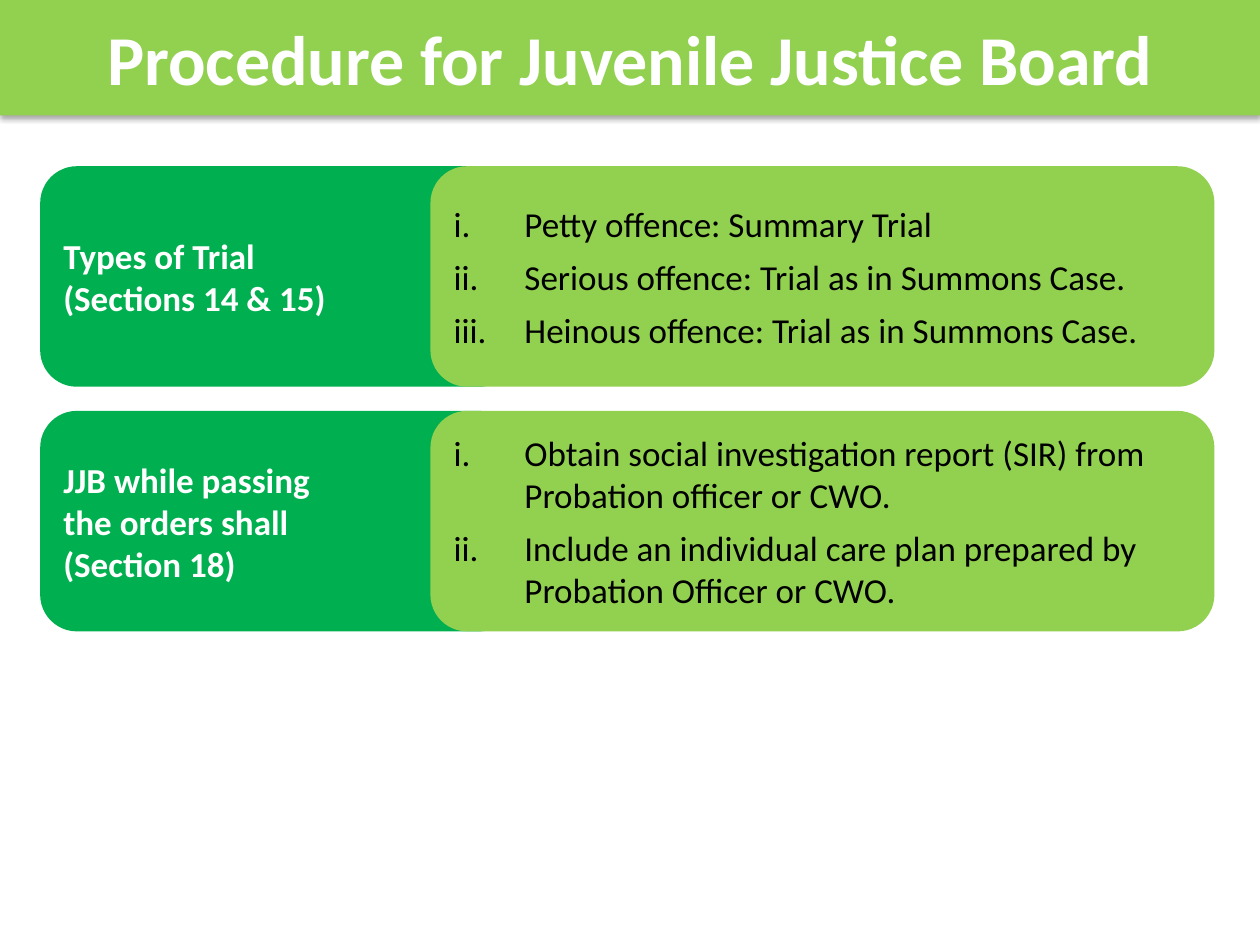
from lxml.etree import SubElement
from pptx import Presentation
from pptx.dml.color import RGBColor
from pptx.enum.shapes import MSO_SHAPE
from pptx.enum.text import MSO_ANCHOR, MSO_AUTO_SIZE, PP_ALIGN
from pptx.oxml import parse_xml
from pptx.oxml.ns import nsdecls, qn
from pptx.util import Pt

LIGHT_GREEN = RGBColor(0x92, 0xD0, 0x50)
DARK_GREEN = RGBColor(0x00, 0xB0, 0x50)
WHITE = RGBColor(0xFF, 0xFF, 0xFF)
BLACK = RGBColor(0x00, 0x00, 0x00)

ROW_TOP, ROW_HEIGHT, ROW_PITCH = 95, 126, 139.8
LIST_INDENT = 40.5

ROWS = [
    (["Types of Trial", "(Sections 14 & 15)"],
     ["Petty offence: Summary Trial",
      "Serious offence: Trial as in Summons Case.",
      "Heinous offence: Trial as in Summons Case."]),
    (["JJB while passing \vthe orders shall", "(Section 18)"],
     ["Obtain social investigation report (SIR) from Probation officer or CWO.",
      "Include an individual care plan prepared by Probation Officer or CWO."]),
]


def add_panel(shape_type, left, top, width, height, fill):
    panel = slide.shapes.add_shape(shape_type, Pt(left), Pt(top), Pt(width), Pt(height))
    panel.shadow.inherit = False
    panel.fill.solid()
    panel.fill.fore_color.rgb = fill
    panel.line.fill.background()
    return panel


def write_paragraphs(panel, texts, color, bold=False, numbered=False):
    frame = panel.text_frame
    frame.word_wrap = True
    frame.vertical_anchor = MSO_ANCHOR.MIDDLE
    for index, text in enumerate(texts):
        paragraph = frame.add_paragraph() if index else frame.paragraphs[0]
        paragraph.alignment = PP_ALIGN.LEFT
        if numbered:
            paragraph.space_after = Pt(6)
            properties = paragraph._p.get_or_add_pPr()
            properties.set("marL", str(Pt(LIST_INDENT)))
            properties.set("indent", str(-Pt(LIST_INDENT)))
            SubElement(properties, qn("a:buFont"), typeface="+mj-lt")
            SubElement(properties, qn("a:buAutoNum"), type="romanLcPeriod")
        for part, words in enumerate(text.split("\v")):
            if part:
                paragraph.add_line_break()
            run = paragraph.add_run()
            run.text = words
            run.font.name = "Calibri"
            run.font.size = Pt(20)
            run.font.bold = bold
            run.font.color.rgb = color


presentation = Presentation()
presentation.slide_width = Pt(720)
presentation.slide_height = Pt(540)
slide = presentation.slides.add_slide(presentation.slide_layouts[5])

# Header band, placed behind the title
header = add_panel(MSO_SHAPE.RECTANGLE, 0, 0, 720, 66, LIGHT_GREEN)
header._element.spPr.find(qn("a:effectLst")).append(parse_xml(
    f'<a:outerShdw {nsdecls("a")} blurRad="{Pt(3.1)}" dist="{Pt(1.8)}" dir="5400000" '
    'rotWithShape="0"><a:srgbClr val="000000"><a:alpha val="35000"/></a:srgbClr></a:outerShdw>'))
slide.shapes._spTree.insert(2, header._element)

title = slide.shapes.title
title.left, title.top, title.width, title.height = Pt(0), Pt(18), Pt(720), Pt(29.5)
title.text_frame.auto_size = MSO_AUTO_SIZE.NONE
title.text_frame.vertical_anchor = MSO_ANCHOR.MIDDLE
heading = title.text_frame.paragraphs[0]
heading.alignment = PP_ALIGN.CENTER
heading_run = heading.add_run()
heading_run.text = "Procedure for Juvenile Justice Board"
heading_run.font.name = "Calibri"
heading_run.font.size = Pt(40)
heading_run.font.bold = True
heading_run.font.color.rgb = WHITE

# One row per topic: dark label overlapped by its numbered list
for row, (topic, points) in enumerate(ROWS):
    top = ROW_TOP + row * ROW_PITCH
    label = add_panel(MSO_SHAPE.ROUNDED_RECTANGLE, 23, top, 272, ROW_HEIGHT, DARK_GREEN)
    write_paragraphs(label, topic, WHITE, bold=True)
    details = add_panel(MSO_SHAPE.ROUNDED_RECTANGLE, 246, top, 448, ROW_HEIGHT, LIGHT_GREEN)
    write_paragraphs(details, points, BLACK, numbered=True)

presentation.save("out.pptx")
